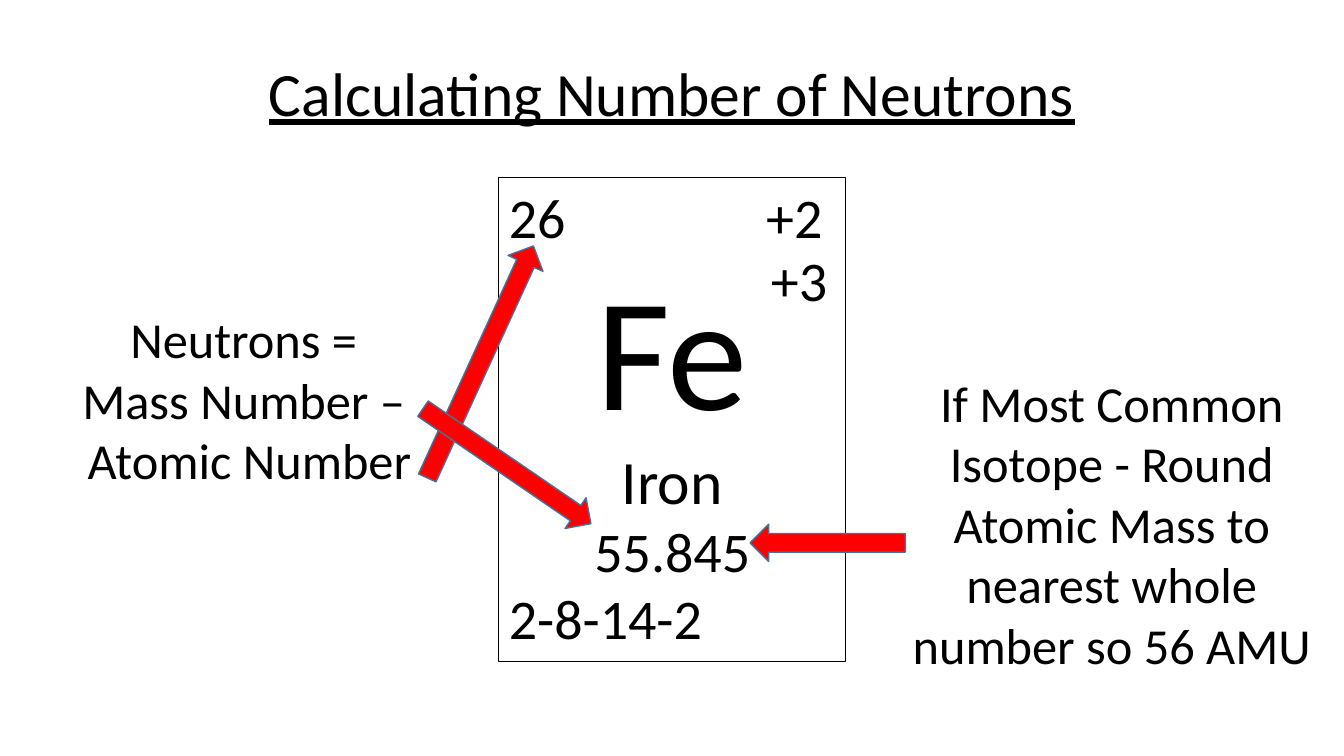
from lxml.etree import SubElement
from pptx import Presentation
from pptx.dml.color import RGBColor
from pptx.enum.shapes import MSO_SHAPE
from pptx.enum.text import MSO_ANCHOR, PP_ALIGN
from pptx.oxml.ns import qn
from pptx.util import Pt

COLORS = {"ink": "000000", "card": "FFFFFF", "arrow": "FF0000", "arrow_edge": "43739E"}
FONT = "Calibri"


def color(name):
    return RGBColor.from_string(COLORS[name])


def write_lines(frame, lines, anchor=MSO_ANCHOR.TOP):
    """Fill a text frame with (text, size, alignment) lines."""
    frame.word_wrap = True
    frame.vertical_anchor = anchor
    for index, (text, size, alignment) in enumerate(lines):
        paragraph = frame.add_paragraph() if index else frame.paragraphs[0]
        paragraph.alignment = alignment
        run = paragraph.add_run()
        run.text = text
        run.font.size = Pt(size)
        run.font.name = FONT
        run.font.color.rgb = color("ink")


def add_title(slide, text):
    title = slide.shapes.title
    title.left, title.top, title.width, title.height = Pt(66), Pt(16.6), Pt(828), Pt(104.4)
    write_lines(title.text_frame, [(text, 44, PP_ALIGN.CENTER)], MSO_ANCHOR.MIDDLE)
    heading = title.text_frame.paragraphs[0]
    heading.line_spacing = 0.9
    heading.runs[0].font.underline = True


def add_block(slide, shape_kind, box, fill, edge, edge_width):
    block = slide.shapes.add_shape(shape_kind, *map(Pt, box))
    block.shadow.inherit = False
    block.fill.solid()
    block.fill.fore_color.rgb = color(fill)
    block.line.color.rgb = color(edge)
    block.line.width = Pt(edge_width)
    return block


def add_right_tab(paragraph, position):
    tabs = SubElement(paragraph._p.get_or_add_pPr(), qn("a:tabLst"))
    SubElement(tabs, qn("a:tab"), pos=str(Pt(position)), algn="r")


def add_element_card(slide):
    card = add_block(slide, MSO_SHAPE.RECTANGLE, (356.4, 126.7, 247.7, 345.6),
                     "card", "ink", 0.75)
    write_lines(card.text_frame, [
        ("26\t+2", 40, PP_ALIGN.LEFT),
        ("Fe", 115, PP_ALIGN.CENTER),
        ("Iron", 44, PP_ALIGN.CENTER),
        ("55.845", 40, PP_ALIGN.CENTER),
        ("2-8-14-2", 40, PP_ALIGN.LEFT),
    ])
    add_right_tab(card.text_frame.paragraphs[0], 224)


def add_note(slide, box, lines, size=36, alignment=PP_ALIGN.CENTER):
    note = slide.shapes.add_textbox(*map(Pt, box))
    write_lines(note.text_frame, [(line, size, alignment) for line in lines])


def add_arrow(slide, box, rotation):
    arrow = add_block(slide, MSO_SHAPE.RIGHT_ARROW, box, "arrow", "arrow_edge", 1)
    arrow.rotation = rotation


def main():
    deck = Presentation()
    deck.slide_width, deck.slide_height = Pt(960), Pt(540)
    slide = deck.slides.add_slide(deck.slide_layouts.get_by_name("Title Only"))

    add_title(slide, "Calculating Number of Neutrons")
    add_element_card(slide)
    add_arrow(slide, (535.7, 374.4, 110.9, 26.6), 180)
    add_note(slide, (628.6, 262.1, 331.2, 225.4),
             ["If Most Common Isotope - Round Atomic Mass to nearest whole number so 56 AMU"])
    add_note(slide, (0, 216.7, 356.4, 138.2),
             ["Neutrons = ", "Mass Number – ", "Atomic Number"])
    add_arrow(slide, (252, 244.8, 182.2, 27.4), 294.6)
    add_arrow(slide, (289.4, 319.7, 145.4, 26.6), 34.4)
    add_note(slide, (543.6, 172.1, 68.4, 55.4), ["+3"], 40, PP_ALIGN.LEFT)

    deck.save("out.pptx")


if __name__ == "__main__":
    main()
